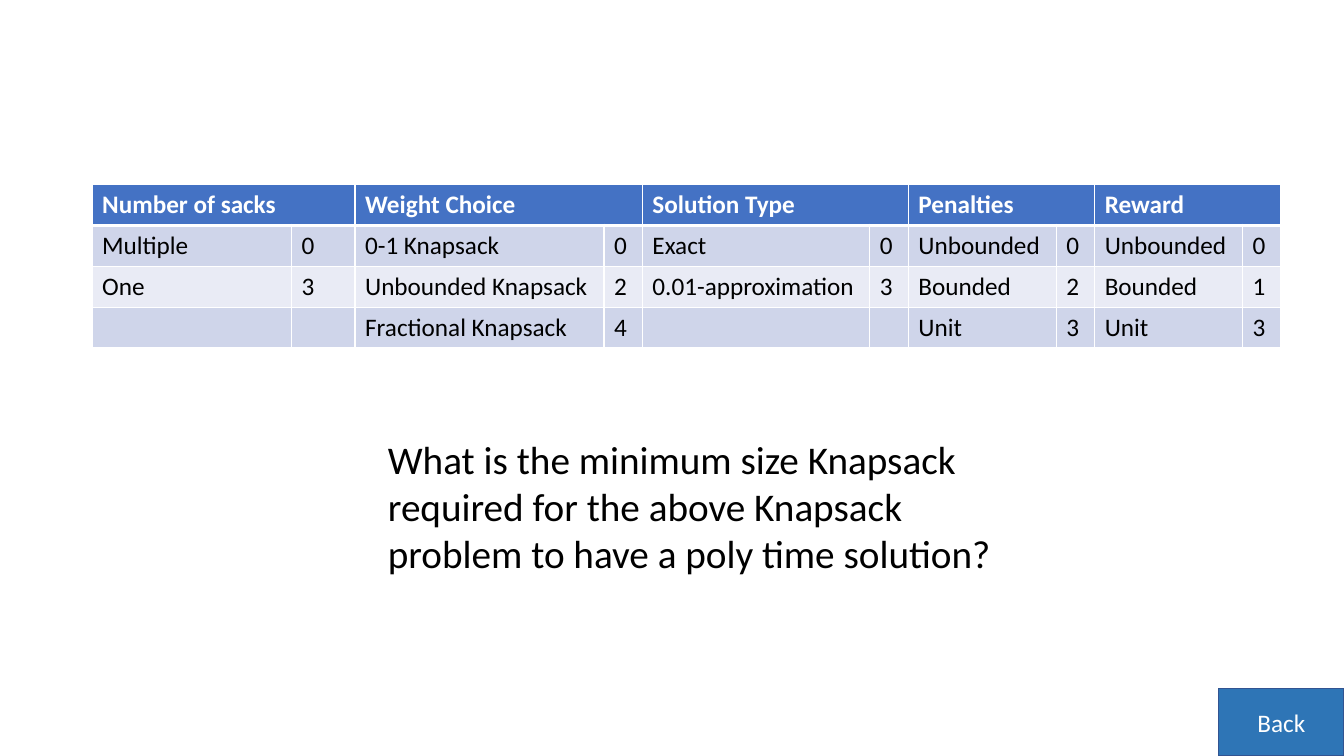
from dataclasses import dataclass

from lxml.etree import SubElement
from pptx import Presentation
from pptx.dml.color import RGBColor
from pptx.enum.shapes import MSO_SHAPE
from pptx.enum.text import MSO_ANCHOR, MSO_AUTO_SIZE, PP_ALIGN
from pptx.oxml.ns import qn
from pptx.slide import Slide
from pptx.table import Table, _Cell
from pptx.text.text import TextFrame
from pptx.util import Pt

WHITE = "FFFFFF"
BLACK = "000000"
HEADER_FILL = "4472C4"
BAND_FILLS = ("CFD5EA", "E9EBF5")
ROW_HEIGHT = 29.2
ROW_COUNT = 4


@dataclass(frozen=True)
class Category:
    title: str
    label_width: float
    score_width: float
    options: tuple[tuple[str, int], ...]


CATEGORIES = (
    Category("Number of sacks", 142.5, 45.3, (("Multiple", 0), ("One", 3))),
    Category("Weight Choice", 177.8, 27.5,
             (("0-1 Knapsack", 0), ("Unbounded Knapsack", 2), ("Fractional Knapsack", 4))),
    Category("Solution Type", 162.5, 27.5, (("Exact", 0), ("0.01-approximation", 3))),
    Category("Penalties", 105.6, 27.5, (("Unbounded", 0), ("Bounded", 2), ("Unit", 3))),
    Category("Reward", 105.6, 27.5, (("Unbounded", 0), ("Bounded", 1), ("Unit", 3))),
)


def color(value: str) -> RGBColor:
    return RGBColor.from_string(value)


def write_text(frame: TextFrame, text: str, size: float, font_color: str,
               bold: bool = False) -> None:
    frame.text = text
    font = frame.paragraphs[0].font
    font.name = "Calibri"
    font.size = Pt(size)
    font.bold = bold
    font.color.rgb = color(font_color)


def style_cell(cell: _Cell, fill: str, top: float, bottom: float) -> None:
    properties = cell._tc.get_or_add_tcPr()
    for side, width in (("L", 1), ("R", 1), ("T", top), ("B", bottom)):
        line = SubElement(properties, qn(f"a:ln{side}"), w=str(Pt(width)))
        line_fill = SubElement(line, qn("a:solidFill"))
        SubElement(line_fill, qn("a:srgbClr"), val=WHITE)
    cell.fill.solid()
    cell.fill.fore_color.rgb = color(fill)


def fill_category(table: Table, column: int, category: Category) -> None:
    table.columns[column].width = Pt(category.label_width)
    table.columns[column + 1].width = Pt(category.score_width)
    for row in range(ROW_COUNT):
        fill = BAND_FILLS[(row - 1) % 2] if row else HEADER_FILL
        for offset in range(2):
            style_cell(table.cell(row, column + offset), fill,
                       3 if row == 1 else 1, 1 if row else 3)
    header = table.cell(0, column)
    header.merge(table.cell(0, column + 1))
    write_text(header.text_frame, category.title, 18, WHITE, bold=True)
    for row, option in enumerate(category.options, start=1):
        for offset, value in enumerate(option):
            write_text(table.cell(row, column + offset).text_frame, str(value), 18, BLACK)


def add_score_table(slide: Slide) -> None:
    width = sum(category.label_width + category.score_width for category in CATEGORIES)
    table = slide.shapes.add_table(
        ROW_COUNT, 2 * len(CATEGORIES), Pt(65.8), Pt(131.8),
        Pt(width), Pt(ROW_COUNT * ROW_HEIGHT)).table
    for row in table.rows:
        row.height = Pt(ROW_HEIGHT)
    for index, category in enumerate(CATEGORIES):
        fill_category(table, 2 * index, category)


def add_back_button(slide: Slide) -> None:
    button = slide.shapes.add_shape(
        MSO_SHAPE.ACTION_BUTTON_CUSTOM, Pt(870.5), Pt(491.8), Pt(89.5), Pt(48.2))
    button.shadow.inherit = False
    button.fill.solid()
    button.fill.fore_color.rgb = color("2E75B6")
    button.line.color.rgb = color("325491")
    button.line.width = Pt(1)
    button.text_frame.vertical_anchor = MSO_ANCHOR.MIDDLE
    write_text(button.text_frame, "Back", 18, WHITE)
    button.text_frame.paragraphs[0].alignment = PP_ALIGN.CENTER


def add_question(slide: Slide) -> None:
    frame = slide.shapes.add_textbox(Pt(270), Pt(307.4), Pt(457.2), Pt(108.7)).text_frame
    frame.word_wrap = True
    frame.auto_size = MSO_AUTO_SIZE.SHAPE_TO_FIT_TEXT
    write_text(frame, "What is the minimum size Knapsack required for the above "
                      "Knapsack problem to have a poly time solution?", 28, BLACK)


def main() -> None:
    presentation = Presentation()
    presentation.slide_width = Pt(960)
    presentation.slide_height = Pt(540)
    slide = presentation.slides.add_slide(presentation.slide_layouts[6])
    add_back_button(slide)
    add_score_table(slide)
    add_question(slide)
    presentation.save("out.pptx")


if __name__ == "__main__":
    main()
